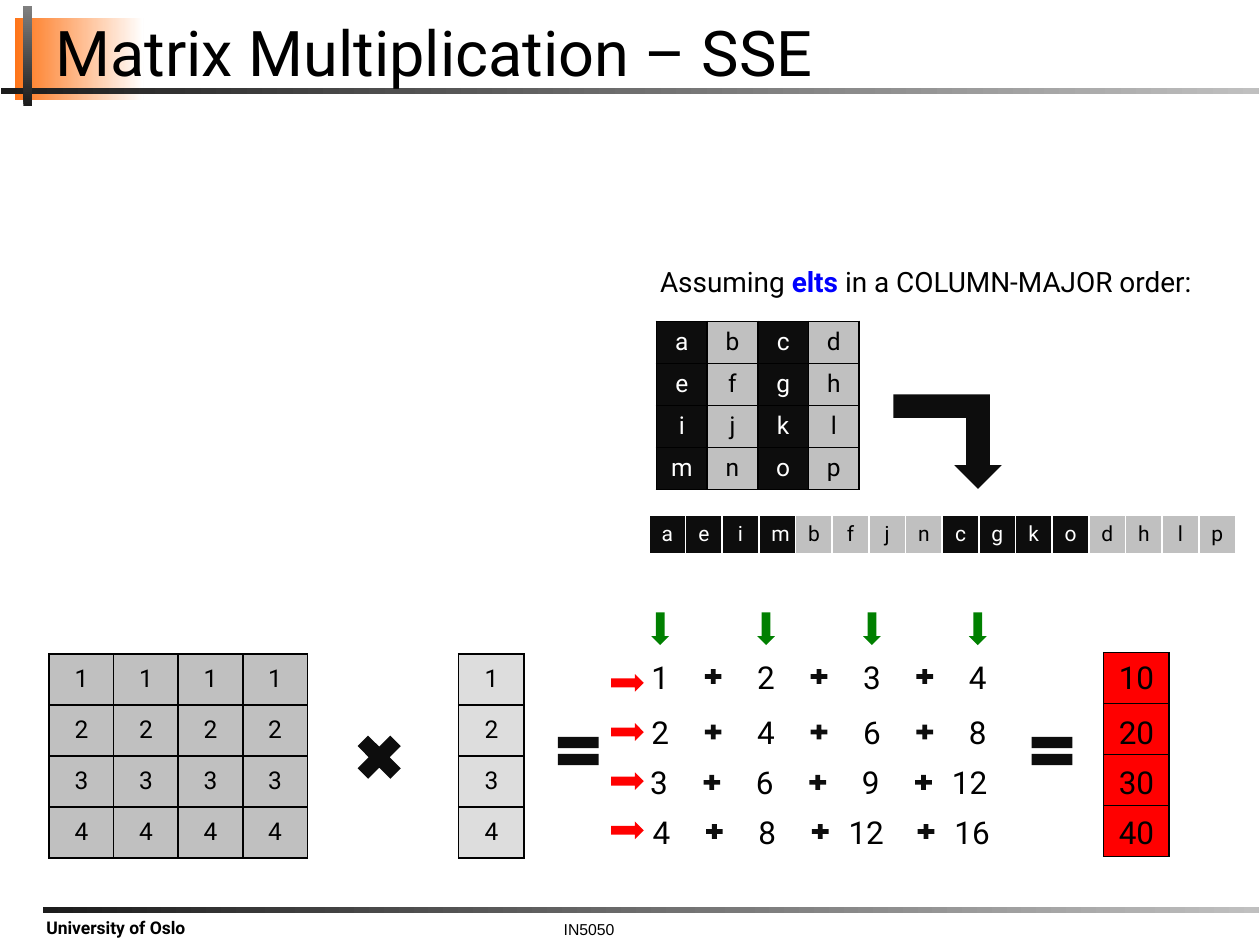
from lxml.etree import SubElement as Sub
from pptx import Presentation
from pptx.dml.color import RGBColor as Rgb
from pptx.enum.shapes import MSO_SHAPE as Kind
from pptx.enum.text import MSO_ANCHOR as Anchor, PP_ALIGN as Align
from pptx.oxml.ns import qn
from pptx.util import Inches, Pt

# Content
TITLE = "Matrix Multiplication – SSE"
NOTE = [("Assuming ", "black", False), ("elts ", "blue", True),
        ("in a COLUMN-MAJOR order:", "black", False)]
LETTERS = ["abcd", "efgh", "ijkl", "mnop"]
MATRIX = [[n] * 4 for n in (1, 2, 3, 4)]
VECTOR = [[1], [2], [3], [4]]
TERMS = [[row * col for col in (1, 2, 3, 4)] for row in (1, 2, 3, 4)]
COLORS = {"black": "000000", "white": "FFFFFF", "ink": "0D0D0D", "gray": "C0C0C0",
          "pale": "DDDDDD", "red": "FF0000", "green": "008000", "blue": "0000FF",
          "orange": "FE7519", "coal": "1C1C1C", "steel": "808080"}

# Grid of the worked sums: column pitch, row tops, small row shifts
LEFT, STEP, CELL = 5.04, 0.84, 0.4
TOPS = [5.17, 5.61, 6.01, 6.4]
SHIFTS = [0, 0, -0.01, 0.01]

deck = Presentation()
deck.slide_width, deck.slide_height = Inches(10), Inches(7.5)
slide = deck.slides.add_slide(deck.slide_layouts[6])
shapes = slide.shapes


def tint(name):
    return Rgb.from_string(COLORS[name])


def style(font, size, color="black", bold=False, face="Roboto"):
    font.size, font.name, font.bold = Pt(size), face, bold
    font.color.rgb = tint(color)


def draw(kind, x, y, w, h, *fill, turn=0):
    """One colour gives a plain fill, two give a gradient."""
    shape = shapes.add_shape(kind, Inches(x), Inches(y), Inches(w), Inches(h))
    shape.shadow.inherit = False
    shape.line.fill.background()
    shape.rotation = turn
    if len(fill) == 1:
        shape.fill.solid()
        shape.fill.fore_color.rgb = tint(fill[0])
    else:
        shape.fill.gradient()
        shape.fill.gradient_angle = 0
        for stop, name in zip(shape.fill.gradient_stops, fill):
            stop.color.rgb = tint(name)
    return shape


def write(text, x, y, w, h, size, align=Align.CENTER, top=0.05, **look):
    frame = shapes.add_textbox(Inches(x), Inches(y), Inches(w), Inches(h)).text_frame
    frame.word_wrap = True
    frame.margin_top = Inches(top)
    para = frame.paragraphs[0]
    para.text, para.alignment = str(text), align
    style(para.font, size, **look)
    return frame


def edge(cell, color, low):
    props = cell._tc.get_or_add_tcPr()
    for side in "LRTB":
        width = low if side == "B" else 1
        line = Sub(props, qn("a:ln" + side), w=str(Pt(width)))
        Sub(Sub(line, qn("a:solidFill")), qn("a:srgbClr"), val=COLORS[color])


def table(rows, x, y, w, h, size, fill, border="black", low=1, anchor=Anchor.MIDDLE):
    """fill is a rule from column number to colour name."""
    count, wide = len(rows), len(rows[0])
    grid = shapes.add_table(count, wide, Inches(x), Inches(y), Inches(w), Inches(h)).table
    grid.first_row = grid.horz_banding = False
    for col in grid.columns:
        col.width = Inches(w / wide)
    for row, line in zip(grid.rows, rows):
        row.height = Inches(h / count)
        for num, (cell, value) in enumerate(zip(row.cells, line)):
            shade = fill(num)
            edge(cell, border, low)
            cell.fill.solid()
            cell.fill.fore_color.rgb = tint(shade)
            cell.vertical_anchor = anchor
            para = cell.text_frame.paragraphs[0]
            para.text, para.alignment = str(value), Align.CENTER
            style(para.font, size, "white" if shade == "ink" else "black")


def band(num):
    return "gray" if num % 2 else "ink"


# Frame, footer and title
draw(Kind.RECTANGLE, 0.12, 0.14, 1.02, 0.65, "orange", "white")
write("IN5050", 1.82, 7.27, 5.71, 0.23, 9, top=0.03, face="Arial")
draw(Kind.RECTANGLE, 0.01, 0.7, 9.98, 0.05, "coal", "gray")
draw(Kind.RECTANGLE, -0.18, 0.41, 0.8, 0.07, "coal", "steel", turn=270)
draw(Kind.RECTANGLE, 0.34, 7.2, 9.65, 0.05, "coal", "gray")
write("University of Oslo", 0.27, 7.25, 1.63, 0.24, 10, Align.LEFT, top=0.03, bold=True)
head = write(TITLE, 0.34, 0.14, 9.62, 0.61, 36, Align.LEFT)
head.vertical_anchor = Anchor.BOTTOM
head.paragraphs[0].line_spacing = 0.8

# Column-major layout
note = write("", 5.14, 2.05, 4.47, 0.37, 16, Align.LEFT)
note.word_wrap = False
for text, color, bold in NOTE:
    run = note.paragraphs[0].add_run()
    run.text = text
    style(run.font, 16, color, bold)
table(LETTERS, 5.21, 2.55, 1.61, 1.33, 14, band)
strip = [letter for col in zip(*LETTERS) for letter in col]
table([strip], 5.15, 4.09, 4.66, 0.32, 12, lambda num: band(num // 4),
      border="white", low=3, anchor=Anchor.TOP)
bend = draw(Kind.BENT_UP_ARROW, 7.09, 3.13, 0.86, 0.75, "ink")
bend.element.spPr.get_or_add_xfrm().set("flipV", "1")

# Matrix times vector
table(MATRIX, 0.39, 5.19, 2.05, 1.62, 14, lambda num: "gray")
table(VECTOR, 3.64, 5.19, 0.52, 1.62, 14, lambda num: "pale")
draw(Kind.MATH_MULTIPLY, 2.76, 5.76, 0.5, 0.5, "ink")
for x in (4.37, 8.13):
    draw(Kind.MATH_EQUAL, x, 5.77, 0.44, 0.38, "ink")
table([[""]] * 4, 8.76, 5.18, 0.52, 1.62, 18, lambda num: "red")

# Sums, one row each, with the arrows that mark rows and columns
for num, (terms, top, shift) in enumerate(zip(TERMS, TOPS, SHIFTS)):
    for col, term in enumerate(terms):
        x = LEFT + shift + col * STEP
        width = CELL if term < 10 else 0.51
        write(term, x + CELL - width, top, width, CELL, 18)
        if col < 3:
            draw(Kind.MATH_PLUS, x + 0.53, top + 0.12, 0.18, 0.16, "ink")
    write(sum(terms), 8.67, top, 0.7, CELL, 18)
    draw(Kind.RIGHT_ARROW, 4.85, 5.35 + num * 0.39, 0.26, 0.14, "red")
    draw(Kind.RIGHT_ARROW, 5.11 + num * STEP, 4.92, 0.26, 0.14, "green", turn=90)

deck.save("out.pptx")
